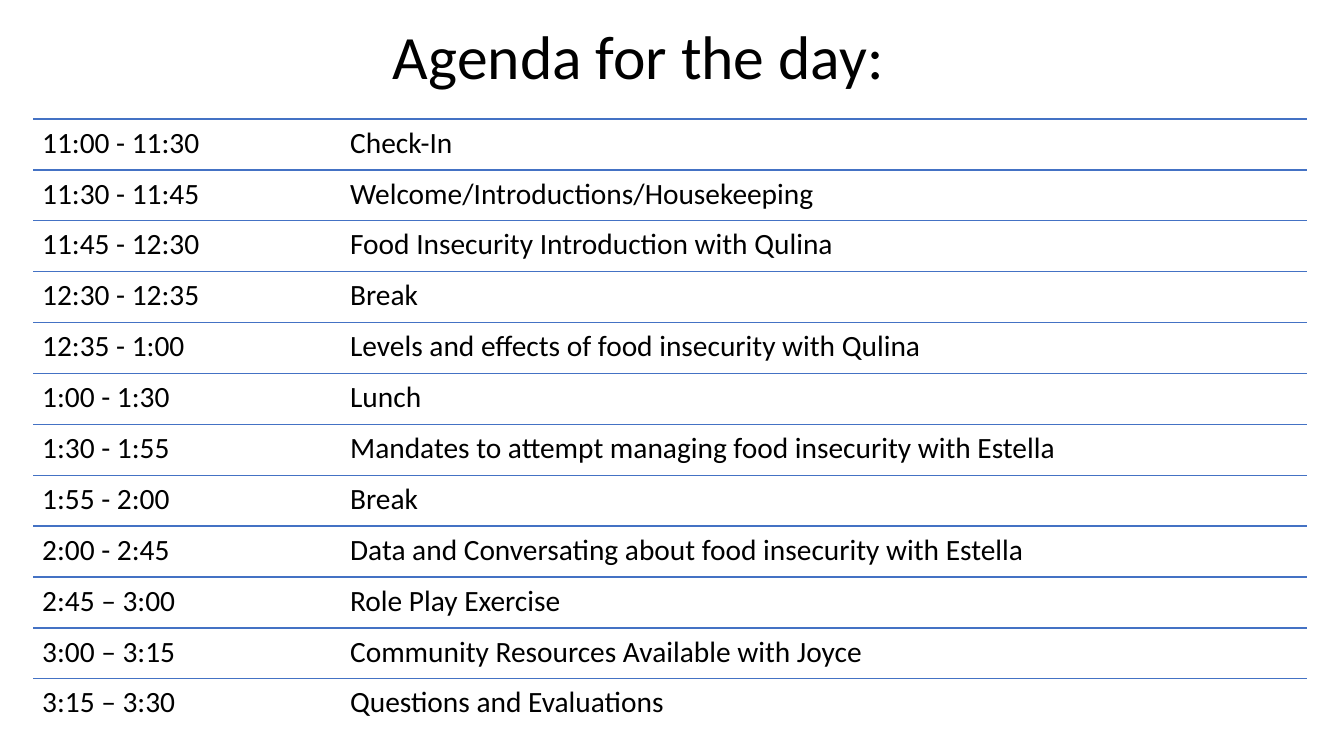
from lxml import etree
from pptx import Presentation
from pptx.dml.color import RGBColor
from pptx.enum.shapes import MSO_CONNECTOR
from pptx.enum.text import MSO_ANCHOR
from pptx.oxml.ns import qn
from pptx.util import Pt

STRAIGHT = MSO_CONNECTOR.STRAIGHT
TOP, MIDDLE = MSO_ANCHOR.TOP, MSO_ANCHOR.MIDDLE

TITLE = "Agenda for the day:"
AGENDA = [
    ("11:00 - 11:30", "Check-In"),
    ("11:30 - 11:45", "Welcome/Introductions/Housekeeping"),
    ("11:45 - 12:30", "Food Insecurity Introduction with Qulina"),
    ("12:30 - 12:35", "Break"),
    ("12:35 - 1:00", "Levels and effects of food insecurity with Qulina"),
    ("1:00 - 1:30", "Lunch"),
    ("1:30 - 1:55", "Mandates to attempt managing food insecurity with Estella"),
    ("1:55 - 2:00", "Break"),
    ("2:00 - 2:45", "Data and Conversating about food insecurity with Estella"),
    ("2:45 – 3:00", "Role Play Exercise"),
    ("3:00 – 3:15", "Community Resources Available with Joyce"),
    ("3:15 – 3:30", "Questions and Evaluations"),
]
COLORS = {"text": "000000", "rule": "4472C4"}
FONT = "Calibri"
LEFT, TOP_EDGE, WIDTH, ROW_HEIGHT = 23.8, 85, 910, 36.35
TOPIC_TAB = 220


def add_text(s, text, x, y, w, h, size, anchor, inset_x, inset_y):
    tf = s.shapes.add_textbox(Pt(x), Pt(y), Pt(w), Pt(h)).text_frame
    tf.word_wrap = True
    tf.vertical_anchor = anchor
    tf.margin_left = tf.margin_right = Pt(inset_x)
    tf.margin_top = tf.margin_bottom = Pt(inset_y)
    p = tf.paragraphs[0]
    p.text = text
    p.line_spacing = 0.9
    p.font.name = FONT
    p.font.size = Pt(size)
    p.font.color.rgb = RGBColor.from_string(COLORS["text"])
    return p


def add_tab_stop(p, position):
    tabs = etree.Element(qn("a:tabLst"))
    etree.SubElement(tabs, qn("a:tab"), pos=str(Pt(position)), algn="l")
    p.font._element.addprevious(tabs)


def add_rule(s, y):
    line = s.shapes.add_connector(STRAIGHT, Pt(LEFT), Pt(y), Pt(LEFT + WIDTH), Pt(y))
    line.line.color.rgb = RGBColor.from_string(COLORS["rule"])
    line.line.width = Pt(1)
    etree.SubElement(line._element.spPr, qn("a:effectLst"))


prs = Presentation()
prs.slide_width, prs.slide_height = Pt(960), Pt(540)
s = prs.slides.add_slide(prs.slide_layouts[6])

add_text(s, TITLE, 273.6, 9.4, 373, 65.5, 44, MIDDLE, 7.2, 3.6)
for i, (time, topic) in enumerate(AGENDA):
    y = TOP_EDGE + i * ROW_HEIGHT
    add_rule(s, y)
    p = add_text(s, f"{time}\t{topic}", LEFT, y, WIDTH, ROW_HEIGHT, 21, TOP, 6.3, 6.3)
    add_tab_stop(p, TOPIC_TAB)

prs.save("out.pptx")
